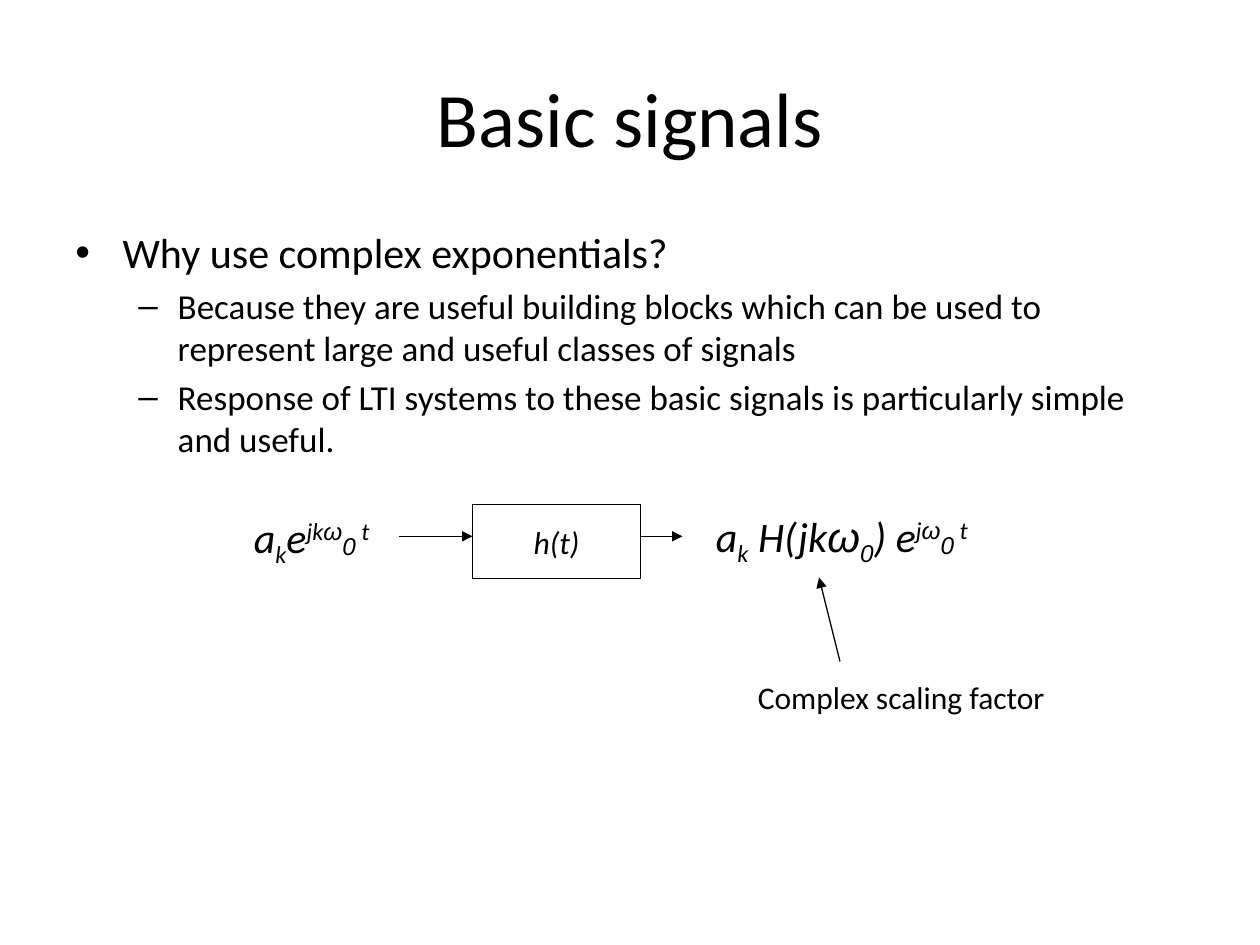
from lxml.etree import SubElement
from pptx import Presentation
from pptx.dml.color import RGBColor
from pptx.enum.shapes import MSO_CONNECTOR as Connector, MSO_SHAPE as Shape
from pptx.enum.text import MSO_ANCHOR as Anchor, MSO_AUTO_SIZE as AutoSize, PP_ALIGN as Align
from pptx.oxml.ns import qn
from pptx.util import Pt

COLORS = {"ink": "000000", "paper": "FFFFFF"}
FONT, GREEK_FONT = "Calibri", "Arial"
SUB, SUPER, LOWERED = -25, 30, -5  # baseline shifts in percent

# level, text, size, left indent, hanging indent, bullet, space before
BULLETS = [
    (0, "Why use complex exponentials?", 24, 27, 27, "•", 0),
    (1, "Because they are useful building blocks which can be used to "
        "represent large and useful classes of signals", 20, 58.5, 22.5, "–", 4),
    (1, "Response of LTI systems to these basic signals is particularly "
        "simple and useful.", 20, 58.5, 22.5, "–", 4),
]

# text, baseline shift, font
INPUT_SIGNAL = [
    ("a", 0, FONT), ("k", SUB, FONT), ("e", 0, FONT), ("jk", SUPER, FONT),
    ("ω", SUPER, GREEK_FONT), ("0", LOWERED, GREEK_FONT), (" t", SUPER, FONT),
]
OUTPUT_SIGNAL = [
    ("a", 0, FONT), ("k", SUB, FONT), (" H(jk", 0, FONT), ("ω", 0, GREEK_FONT),
    ("0", SUB, GREEK_FONT), (") e", 0, FONT), ("j", SUPER, FONT),
    ("ω", SUPER, GREEK_FONT), ("0", LOWERED, GREEK_FONT), (" t", SUPER, FONT),
]


def color(name):
    return RGBColor.from_string(COLORS[name])


def style(para, size, italic=False, align=Align.LEFT):
    para.alignment = align
    font = para.font
    font.name, font.size, font.italic = FONT, Pt(size), italic
    font.color.rgb = color("ink")


def add_title(page, text):
    title = page.shapes.title
    title.left, title.top, title.width, title.height = Pt(36), Pt(21.6), Pt(648), Pt(90)
    title.text_frame.text = text
    title.text_frame.vertical_anchor = Anchor.MIDDLE
    style(title.text_frame.paragraphs[0], 44, align=Align.CENTER)


def add_text_box(page, left, top, width, height, wrap=True):
    box = page.shapes.add_textbox(Pt(left), Pt(top), Pt(width), Pt(height))
    box.text_frame.word_wrap = wrap
    return box.text_frame


def add_bullets(page, left, top, width, height):
    frame = add_text_box(page, left, top, width, height)
    for index, (level, text, size, indent, hanging, bullet, before) in enumerate(BULLETS):
        para = frame.add_paragraph() if index else frame.paragraphs[0]
        para.text, para.level = text, level
        para.space_before = Pt(before)
        style(para, size)
        props = para._p.get_or_add_pPr()
        props.set("marL", str(Pt(indent)))
        props.set("indent", str(-Pt(hanging)))
        mark_font = SubElement(props, qn("a:buFont"), typeface="Arial")
        mark = SubElement(props, qn("a:buChar"), char=bullet)
        props.find(qn("a:defRPr")).addprevious(mark_font)
        mark_font.addnext(mark)


def add_formula(page, left, top, width, height, parts):
    frame = add_text_box(page, left, top, width, height, wrap=False)
    frame.auto_size = AutoSize.SHAPE_TO_FIT_TEXT
    para = frame.paragraphs[0]
    style(para, 24, italic=True)
    for text, shift, font_name in parts:
        span = para.add_run()
        span.text = text
        span.font.name = font_name
        if shift:
            span.font._element.set("baseline", str(shift * 1000))


def add_label(page, left, top, width, height, text):
    frame = add_text_box(page, left, top, width, height)
    frame.text = text
    style(frame.paragraphs[0], 18)


def add_system(page, left, top, width, height, text):
    box = page.shapes.add_shape(Shape.RECTANGLE, Pt(left), Pt(top), Pt(width), Pt(height))
    box.shadow.inherit = False
    box.fill.background()
    box.line.color.rgb = color("ink")
    box.line.width = Pt(0.75)
    frame = box.text_frame
    frame.text, frame.word_wrap = text, False
    frame.vertical_anchor = Anchor.MIDDLE
    style(frame.paragraphs[0], 18, italic=True, align=Align.CENTER)


def add_arrow(page, start, end):
    arrow = page.shapes.add_connector(
        Connector.STRAIGHT, *(Pt(value) for value in (*start, *end)))
    arrow.line.color.rgb = color("ink")
    arrow.line.width = Pt(0.75)
    SubElement(arrow.line._get_or_add_ln(), qn("a:tailEnd"), type="triangle")
    SubElement(arrow._element.spPr, qn("a:effectLst"))


def main():
    deck = Presentation()
    deck.slide_width, deck.slide_height = Pt(720), Pt(540)
    page = deck.slides.add_slide(deck.slide_layouts[5])
    page.background.fill.solid()
    page.background.fill.fore_color.rgb = color("paper")

    # Heading and reasons
    add_title(page, "Basic signals")
    add_bullets(page, 36, 126, 648, 150)

    # Signal path: input, system, output
    add_system(page, 270, 288.5, 96, 42, "h(t)")
    add_arrow(page, (228, 306.5), (270, 306.5))
    add_arrow(page, (366, 306.5), (390, 306.5))
    add_formula(page, 138, 288.5, 88.5, 36, INPUT_SIGNAL)
    add_formula(page, 402, 288, 169, 36, OUTPUT_SIGNAL)

    # Note on the scaling factor
    add_arrow(page, (480, 378), (468, 330))
    add_label(page, 426, 384, 258, 29, "Complex scaling factor")

    deck.save("out.pptx")


if __name__ == "__main__":
    main()
